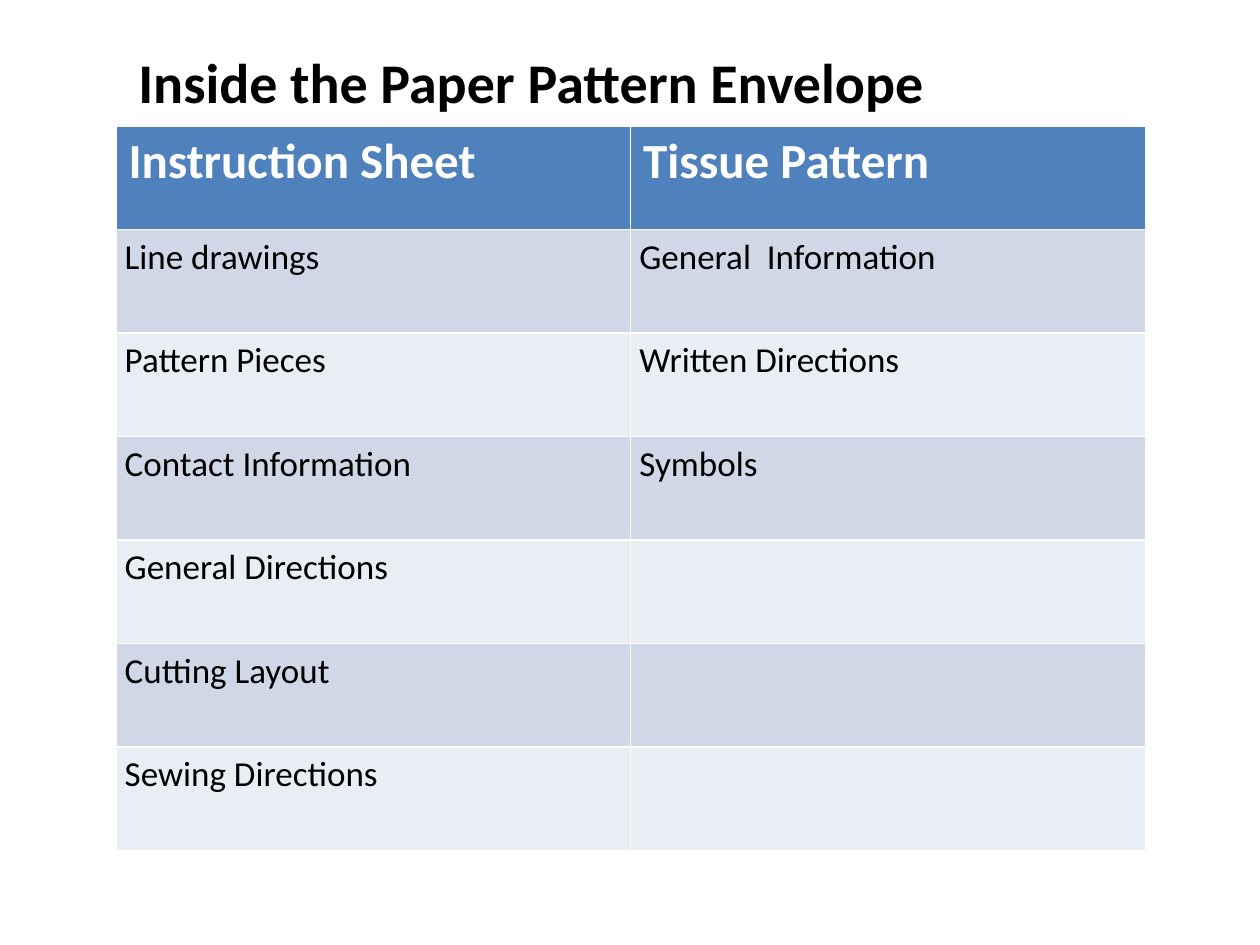
from pptx import Presentation
from pptx.dml.color import RGBColor
from pptx.util import Inches, Pt

BLACK = RGBColor(0x00, 0x00, 0x00)
WHITE = RGBColor(0xFF, 0xFF, 0xFF)
HEADER_BLUE = RGBColor(0x4F, 0x81, 0xBD)
BAND_DARK = RGBColor(0xD0, 0xD8, 0xE8)
BAND_LIGHT = RGBColor(0xE9, 0xED, 0xF4)

ROWS = [
    ("Instruction Sheet", "Tissue Pattern"),
    ("Line drawings", "General  Information"),
    ("Pattern Pieces", "Written Directions"),
    ("Contact Information", "Symbols"),
    ("General Directions", ""),
    ("Cutting Layout", ""),
    ("Sewing Directions", ""),
]


def set_font(para, size, color, bold):
    para.font.name = "Calibri"
    para.font.size = Pt(size)
    para.font.color.rgb = color
    para.font.bold = bold


deck = Presentation()
deck.slide_width = Inches(10)
deck.slide_height = Inches(7.5)
page = deck.slides.add_slide(deck.slide_layouts[6])

# Table: its default style supplies the white rules between cells
table = page.shapes.add_table(
    len(ROWS), 2, Inches(0.92), Inches(1), Inches(8.17), Inches(5.75)
).table

for row_index, texts in enumerate(ROWS):
    for column_index, text in enumerate(texts):
        cell = table.cell(row_index, column_index)
        cell.text = text
        para = cell.text_frame.paragraphs[0]
        cell.fill.solid()
        if row_index == 0:
            cell.fill.fore_color.rgb = HEADER_BLUE
            set_font(para, 28, WHITE, True)
            continue
        cell.fill.fore_color.rgb = BAND_DARK if row_index % 2 else BAND_LIGHT
        cell.margin_left = cell.margin_right = Inches(0.07)
        cell.margin_top = cell.margin_bottom = 0
        para.line_spacing = 1.15
        set_font(para, 20, BLACK, False)

# Title
title_box = page.shapes.add_textbox(Inches(1), Inches(0.33), Inches(7.33), Inches(0.64))
title_box.text_frame.word_wrap = True
title = title_box.text_frame.paragraphs[0]
title.text = "Inside the Paper Pattern Envelope"
set_font(title, 32, BLACK, True)

deck.save("out.pptx")
